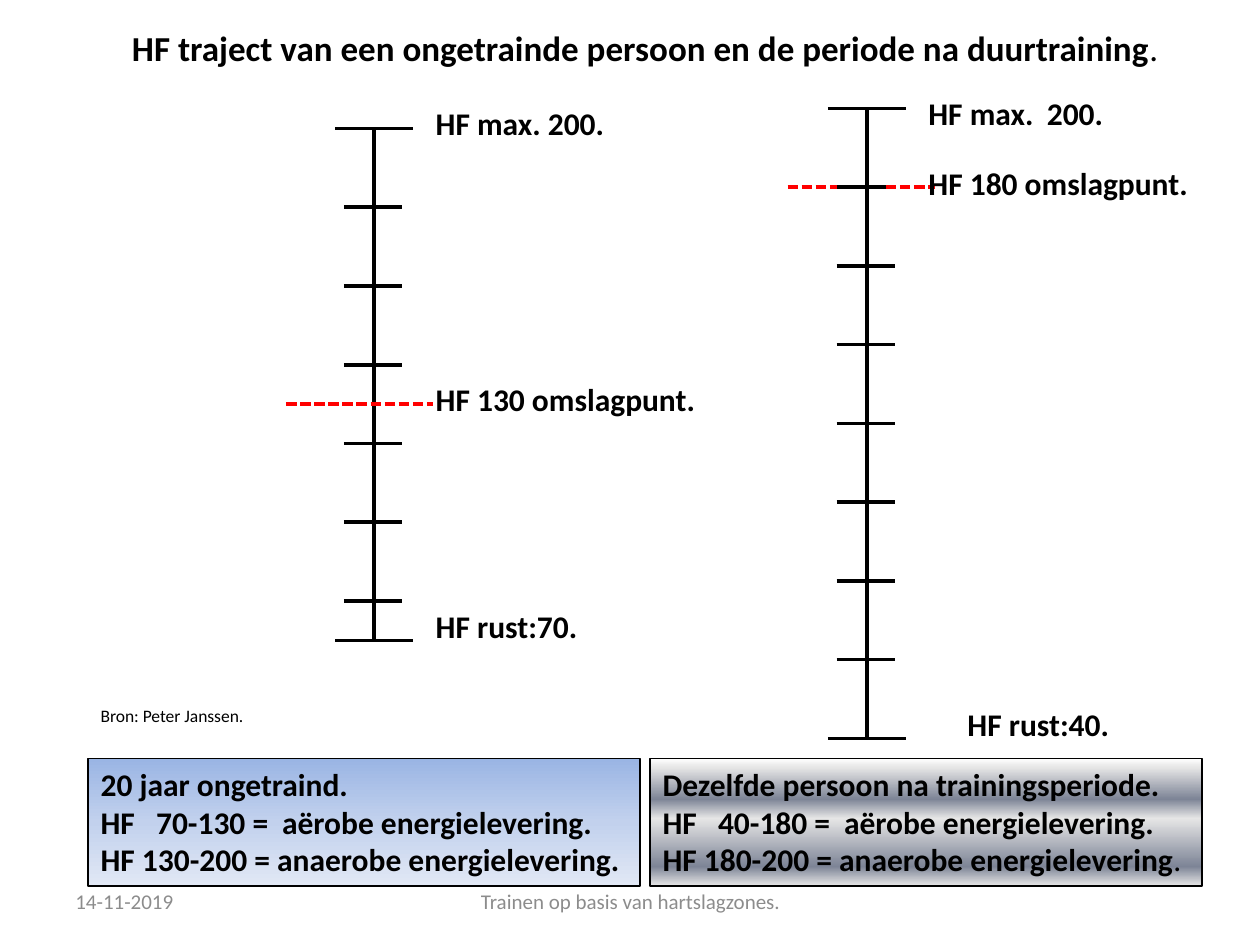
"""Build the slide comparing heart-rate ranges before and after endurance training."""
import pptx
import pptx.dml.color
import pptx.enum.dml
import pptx.enum.shapes
import pptx.enum.text
import pptx.oxml.ns
import pptx.util
from lxml import etree
from pptx.util import Inches

COLORS = {"ink": "000000", "threshold": "FF0000", "footer": "8C8C8C"}
BLUE_STOPS = [(0, "9AB5E4"), (50, "C2D1ED"), (100, "E1E8F5")]
SILVER_STOPS = [(0, "FFFFFF"), (7, "E6E6E6"), (32, "7D8496"),
                (47, "E6E6E6"), (85, "7D8496"), (100, "E6E6E6")]
LEFT = pptx.enum.text.PP_ALIGN.LEFT
CENTER = pptx.enum.text.PP_ALIGN.CENTER
TOP = pptx.enum.text.MSO_ANCHOR.TOP
MIDDLE = pptx.enum.text.MSO_ANCHOR.MIDDLE
MAX_RATE = 200
INCHES_PER_BEAT = 5 / 160
qn = pptx.oxml.ns.qn

prs = pptx.Presentation()
prs.slide_width, prs.slide_height = Inches(10), Inches(7.5)
slide = prs.slides.add_slide(prs.slide_layouts[6])


def draw_line(x1, y1, x2, y2, color="ink"):
    """Draw a 2 pt line, dashed when it marks a threshold."""
    line = slide.shapes.add_connector(
        pptx.enum.shapes.MSO_CONNECTOR.STRAIGHT,
        Inches(x1), Inches(y1), Inches(x2), Inches(y2))
    line.line.color.rgb = pptx.dml.color.RGBColor.from_string(COLORS[color])
    line.line.width = pptx.util.Pt(2)
    if color == "threshold":
        line.line.dash_style = pptx.enum.dml.MSO_LINE.SQUARE_DOT
    etree.SubElement(line._element.spPr, qn("a:effectLst"))


def write(shape, paragraphs, size=18, color="ink", align=LEFT, anchor=TOP, tabs=()):
    """Fill a shape with paragraphs given as lists of (text, bold) runs."""
    frame = shape.text_frame
    frame.word_wrap = True
    frame.vertical_anchor = anchor
    for index, runs in enumerate(paragraphs):
        paragraph = frame.paragraphs[0] if index == 0 else frame.add_paragraph()
        paragraph.alignment = align
        if any("\t" in text for text, bold in runs):
            tab_list = etree.SubElement(paragraph._p.get_or_add_pPr(), qn("a:tabLst"))
            for position in tabs:
                etree.SubElement(tab_list, qn("a:tab"), pos=str(Inches(position)), algn="l")
        for text, bold in runs:
            run = paragraph.add_run()
            run.text = text
            run.font.name = "Calibri"
            run.font.size = pptx.util.Pt(size)
            run.font.bold = bold
            run.font.color.rgb = pptx.dml.color.RGBColor.from_string(COLORS[color])


scales = [
    (2.97, 1.02, 70, 130, [(2.27, 3.44)]),
    (6.88, 0.86, 40, 180, [(6.25, 6.64), (7.03, 7.42)]),
]
for axis, top, rest, threshold, dashes in scales:
    bottom = top + (MAX_RATE - rest) * INCHES_PER_BEAT
    draw_line(axis, top, axis, bottom)
    for end in (top, bottom):
        draw_line(axis - 0.31, end, axis + 0.31, end)
    for rate in range(MAX_RATE - 20, rest, -20):
        tick = top + (MAX_RATE - rate) * INCHES_PER_BEAT
        draw_line(axis - 0.24, tick, axis + 0.22, tick)
    turning = top + (MAX_RATE - threshold) * INCHES_PER_BEAT
    for start, stop in dashes:
        draw_line(start, turning, stop, turning, "threshold")

rate_labels = [
    (3.36, 4.77, 1.48, "HF rust:70."),
    (3.36, 2.97, 2.34, "HF 130 omslagpunt."),
    (3.36, 0.78, 1.64, "HF max. 200."),
    (7.27, 0.7, 1.64, "HF max.\t200."),
    (7.27, 1.25, 2.58, "HF 180 omslagpunt."),
    (7.58, 5.55, 1.48, "HF rust:40."),
]
for x, y, width, text in rate_labels:
    label = slide.shapes.add_textbox(Inches(x), Inches(y), Inches(width), Inches(0.4))
    write(label, [[(text, True)]], tabs=[0.94])

title = slide.shapes.add_textbox(Inches(0.55), Inches(0.16), Inches(9.14), Inches(0.44))
write(title, [[("HF traject van een ongetrainde persoon en de periode na duurtraining", True),
               (".", False)]], size=20, align=CENTER)

summaries = [
    (0.7, BLUE_STOPS, [
        [("20 jaar ongetraind.", True)],
        [("HF\t70-130 =\taërobe energielevering.", True)],
        [("HF 130-200 = anaerobe energielevering.", True)]]),
    (5.16, SILVER_STOPS, [
        [("Dezelfde persoon na trainingsperiode.", True)],
        [("HF\t40-180 =\taërobe energielevering.", True)],
        [("HF 180-200 = anaerobe energielevering", True), (".", False)]]),
]
for x, stops, lines in summaries:
    summary = slide.shapes.add_shape(
        pptx.enum.shapes.MSO_SHAPE.RECTANGLE,
        Inches(x), Inches(6.02), Inches(4.38), Inches(1.01))
    summary.shadow.inherit = False
    summary.fill.gradient()
    summary.fill.gradient_angle = 270
    stop_list = summary._element.spPr.find(qn("a:gradFill")).find(qn("a:gsLst"))
    stop_list.clear()
    for percent, shade in stops:
        stop = etree.SubElement(stop_list, qn("a:gs"), pos=str(percent * 1000))
        etree.SubElement(stop, qn("a:srgbClr"), val=shade)
    summary.line.color.rgb = pptx.dml.color.RGBColor.from_string(COLORS["ink"])
    summary.line.width = pptx.util.Pt(1)
    write(summary, lines, tabs=[0.44, 1.44])

credit = slide.shapes.add_textbox(Inches(0.7), Inches(5.55), Inches(1.41), Inches(0.27))
write(credit, [[("Bron: Peter Janssen.", False)]], size=10)

footers = [
    (0.5, 2.33, "14-11-2019", LEFT),
    (3.42, 3.17, "Trainen op basis van hartslagzones.", CENTER),
]
for x, width, text, align in footers:
    footer = slide.shapes.add_textbox(Inches(x), Inches(6.95), Inches(width), Inches(0.4))
    write(footer, [[(text, False)]], size=12, color="footer", align=align, anchor=MIDDLE)

prs.save("out.pptx")
